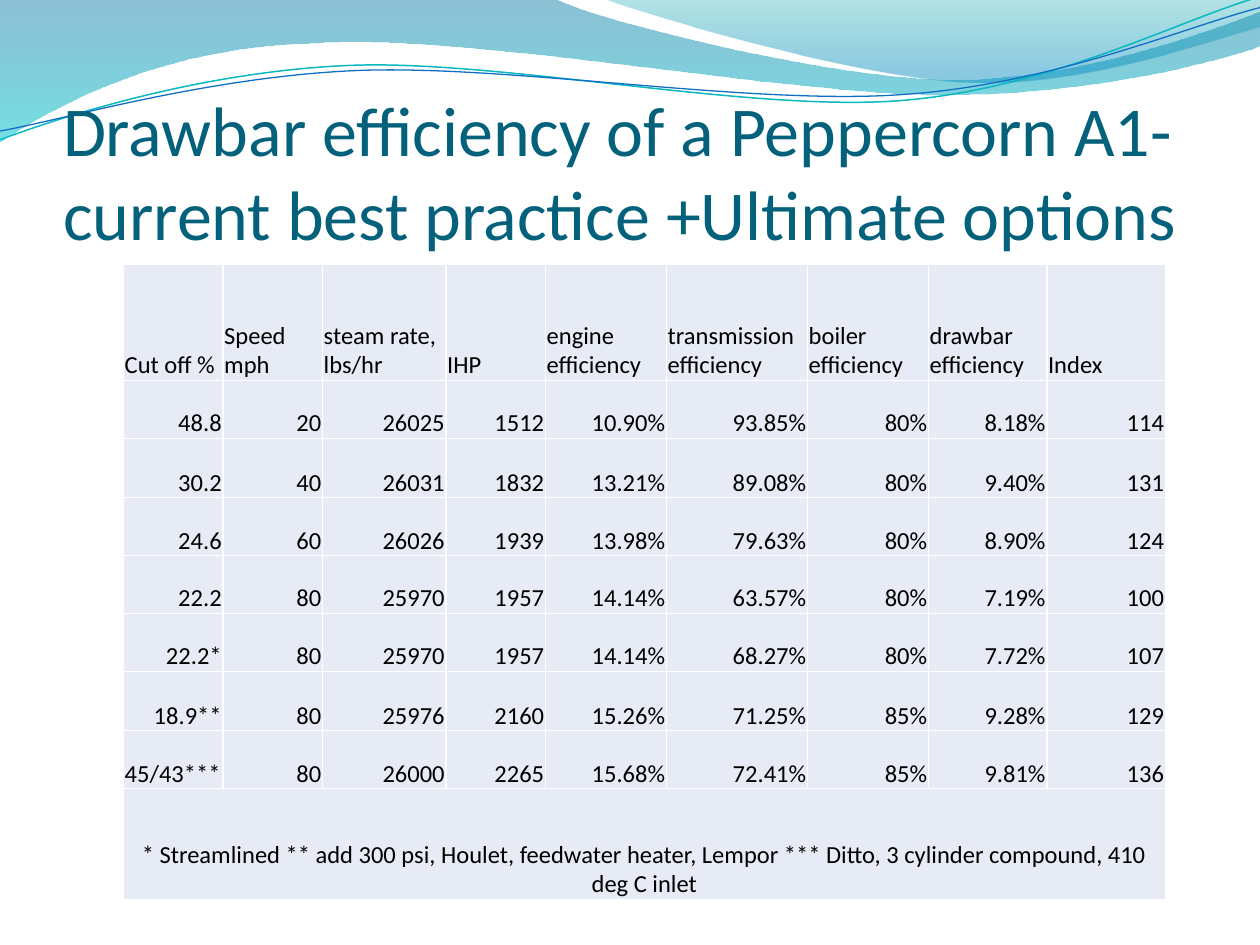
from dataclasses import dataclass
from math import cos, radians, sin

from lxml import etree
from pptx import Presentation
from pptx.dml.color import RGBColor
from pptx.enum.text import MSO_ANCHOR, MSO_AUTO_SIZE, PP_ALIGN
from pptx.oxml.ns import qn
from pptx.util import Inches, Pt

LEFT, CENTER, RIGHT = PP_ALIGN.LEFT, PP_ALIGN.CENTER, PP_ALIGN.RIGHT
BOTTOM = MSO_ANCHOR.BOTTOM
NO_AUTOFIT = MSO_AUTO_SIZE.NONE

FONT = "Calibri"
BLACK = RGBColor(0x00, 0x00, 0x00)
WHITE = RGBColor(0xFF, 0xFF, 0xFF)
TITLE_TEAL = RGBColor(0x04, 0x61, 0x7B)
CELL_BLUE = RGBColor(0xE7, 0xEB, 0xF5)
DEEP_BLUE = RGBColor(0x00, 0x74, 0xA1)
AQUA = RGBColor(0x00, 0xC6, 0xCF)
SEA_GREEN = RGBColor(0x00, 0xA1, 0xA9)
SKY_BLUE = RGBColor(0x00, 0x8B, 0xBF)
LINE_TEAL = RGBColor(0x0A, 0xB8, 0xBF)
LINE_BLUE = RGBColor(0x0F, 0x6F, 0xC6)

DOWNWARD = 270
LINE_TILT = -2.7


@dataclass
class Stop:
    position: float
    color: RGBColor
    opacity: int


@dataclass
class Wave:
    """Steps hold two numbers for a straight line and six for a Bezier curve."""
    box: tuple[float, float, float, float]
    start: tuple[float, float]
    steps: list[tuple[float, ...]]
    stops: tuple[Stop, ...] = ()
    line_color: RGBColor | None = None
    line_width: float = 0
    tilt: float = 0


BANDS = [
    Wave((-0.01, -0.01, 10.02, 1.14), (0, 0), [
        (4.4, -0.01),
        (4.76, 0.17, 6.64, 0.63, 7.58, 0.63),
        (8.53, 0.63, 9.58, 0.26, 10, 0.09),
        (10.01, 0.36),
        (9.83, 0.44, 8.7, 0.76, 7.46, 0.75),
        (6.22, 0.75, 3.82, 0.28, 2.57, 0.34),
        (1.29, 0.36, 0.46, 0.83, -0.01, 1.13),
        (0, 0),
    ], stops=(Stop(0, DEEP_BLUE, 45), Stop(1, AQUA, 55))),
    Wave((4.79, -0.01, 5.21, 0.7), (4.79, -0.01), [
        (5.09, 0.11, 6.82, 0.62, 7.69, 0.65),
        (8.56, 0.69, 9.61, 0.32, 10, 0.21),
        (10, 0),
        (4.79, -0.01),
    ], stops=(Stop(0, SEA_GREEN, 30), Stop(0.8, SKY_BLUE, 45))),
]
LINES = [
    Wave((-0.02, 0.22, 10.02, 0.71), (0, 1.11), [
        (0.48, 0.93, 1.58, 0.57, 2.77, 0.52),
        (3.95, 0.47, 5.93, 0.89, 7.13, 0.8),
        (8.33, 0.71, 9.38, 0.15, 9.98, -0.02),
    ], line_color=LINE_TEAL, line_width=0.85, tilt=LINE_TILT),
    Wave((-0.02, 0.3, 10.03, 0.58), (0, 1.04), [
        (0.47, 0.96, 1.64, 0.61, 2.83, 0.56),
        (4.03, 0.51, 5.97, 0.84, 7.17, 0.75),
        (8.36, 0.67, 9.41, 0.21, 10, 0.06),
    ], line_color=LINE_BLUE, line_width=0.75, tilt=LINE_TILT),
]

TITLE = "Drawbar efficiency of a Peppercorn A1- current best practice +Ultimate options"
HEADERS = ["Cut off %", "Speed mph", "steam rate, lbs/hr", "IHP", "engine efficiency",
           "transmission efficiency", "boiler efficiency", "drawbar efficiency", "Index"]
RUNS = [
    ["48.8", "20", "26025", "1512", "10.90%", "93.85%", "80%", "8.18%", "114"],
    ["30.2", "40", "26031", "1832", "13.21%", "89.08%", "80%", "9.40%", "131"],
    ["24.6", "60", "26026", "1939", "13.98%", "79.63%", "80%", "8.90%", "124"],
    ["22.2", "80", "25970", "1957", "14.14%", "63.57%", "80%", "7.19%", "100"],
    ["22.2*", "80", "25970", "1957", "14.14%", "68.27%", "80%", "7.72%", "107"],
    ["18.9**", "80", "25976", "2160", "15.26%", "71.25%", "85%", "9.28%", "129"],
    ["45/43***", "80", "26000", "2265", "15.68%", "72.41%", "85%", "9.81%", "136"],
]
FOOTNOTE = ("* Streamlined ** add 300 psi, Houlet, feedwater heater, Lempor "
            "*** Ditto, 3 cylinder compound, 410 deg C inlet")
COLUMN_WIDTHS = [0.79, 0.79, 0.98, 0.79, 0.96, 1.12, 0.96, 0.94, 0.94]
ROW_HEIGHTS = [0.92, 0.46, 0.47, 0.46, 0.46, 0.46, 0.47, 0.46, 0.88]


def apply(target, values: dict) -> None:
    for name, value in values.items():
        setattr(target, name, value)


def to_local(wave: Wave, x: float, y: float) -> tuple[int, int]:
    """Turn a slide position into one inside the wave's box before its tilt."""
    left, top, width, height = wave.box
    across, down = x - left - width / 2, y - top - height / 2
    angle = radians(-wave.tilt)
    return (Inches(across * cos(angle) - down * sin(angle) + width / 2),
            Inches(across * sin(angle) + down * cos(angle) + height / 2))


def draw_curves(shape, wave: Wave) -> None:
    """Replace the straight outline by the wave's lines and Bezier curves."""
    outline = next(shape._element.iter(qn("a:path")))
    for child in list(outline):
        outline.remove(child)
    outline.set("w", str(shape.width))
    outline.set("h", str(shape.height))
    for step in [wave.start, *wave.steps]:
        if step is wave.start:
            tag = "a:moveTo"
        else:
            tag = "a:lnTo" if len(step) == 2 else "a:cubicBezTo"
        segment = etree.SubElement(outline, qn(tag))
        for x, y in zip(step[::2], step[1::2]):
            across, down = to_local(wave, x, y)
            etree.SubElement(segment, qn("a:pt"), x=str(across), y=str(down))
    if wave.stops:
        etree.SubElement(outline, qn("a:close"))


def draw_wave(slide, wave: Wave):
    builder = slide.shapes.build_freeform(*map(Inches, wave.start))
    builder.add_line_segments([tuple(map(Inches, step[-2:])) for step in wave.steps], close=False)
    shape = builder.convert_to_shape()
    shape.shadow.inherit = False
    left, top, width, height = map(Inches, wave.box)
    apply(shape, {"left": left, "top": top, "width": width, "height": height,
                  "rotation": wave.tilt})
    draw_curves(shape, wave)
    if not wave.stops:
        shape.fill.background()
        shape.line.color.rgb = wave.line_color
        shape.line.width = Pt(wave.line_width)
        return shape
    shape.line.fill.background()
    shape.fill.gradient()
    shape.fill.gradient_angle = DOWNWARD
    for gradient_stop, stop in zip(shape.fill.gradient_stops, wave.stops):
        gradient_stop.position = stop.position
        gradient_stop.color.rgb = stop.color
    for color, stop in zip(shape._element.spPr.iter(qn("a:srgbClr")), wave.stops):
        etree.SubElement(color, qn("a:alpha"), val=str(stop.opacity * 1000))
    return shape


def write(frame, text: str, size: float, color: RGBColor, alignment) -> None:
    paragraph = frame.paragraphs[0]
    paragraph.alignment = alignment
    span = paragraph.add_run()
    span.text = text
    apply(span.font, {"name": FONT, "size": Pt(size)})
    span.font.color.rgb = color


def add_borders(cell) -> None:
    properties = cell._tc.get_or_add_tcPr()
    for position, side in enumerate(("lnL", "lnR", "lnT", "lnB")):
        border = etree.Element(qn(f"a:{side}"), w=str(Pt(1)))
        fill = etree.SubElement(border, qn("a:solidFill"))
        etree.SubElement(fill, qn("a:srgbClr"), val=str(WHITE))
        properties.insert(position, border)


def fill_cell(cell, text: str, alignment) -> None:
    apply(cell, {"vertical_anchor": BOTTOM, "margin_left": Inches(0.01),
                 "margin_right": Inches(0.01), "margin_top": Inches(0.01), "margin_bottom": 0})
    cell.fill.solid()
    cell.fill.fore_color.rgb = CELL_BLUE
    add_borders(cell)
    if text:
        write(cell.text_frame, text, 14, BLACK, alignment)


def add_efficiency_table(slide) -> None:
    rows = [HEADERS, *RUNS, [FOOTNOTE] + [""] * (len(HEADERS) - 1)]
    table = slide.shapes.add_table(
        len(rows), len(HEADERS), Inches(0.98), Inches(2.1),
        Inches(sum(COLUMN_WIDTHS)), Inches(sum(ROW_HEIGHTS))).table
    apply(table, {"first_row": False, "horz_banding": False})
    for column, width in zip(table.columns, COLUMN_WIDTHS):
        column.width = Inches(width)
    for row, height in zip(table.rows, ROW_HEIGHTS):
        row.height = Inches(height)
    last = len(rows) - 1
    table.cell(last, 0).merge(table.cell(last, len(HEADERS) - 1))
    for row_index, texts in enumerate(rows):
        for column_index, text in enumerate(texts):
            left_aligned = row_index == 0 or text == "45/43***"
            alignment = CENTER if row_index == last else LEFT if left_aligned else RIGHT
            fill_cell(table.cell(row_index, column_index), text, alignment)


def place_title(slide) -> None:
    title = slide.shapes.title
    apply(title, {"left": Inches(0.5), "top": Inches(0.77),
                  "width": Inches(9), "height": Inches(1.25)})
    apply(title.text_frame, {"margin_left": 0, "margin_right": 0, "margin_top": Inches(0.05),
                             "margin_bottom": 0, "vertical_anchor": BOTTOM,
                             "word_wrap": True, "auto_size": NO_AUTOFIT})
    write(title.text_frame, TITLE, 40, TITLE_TEAL, LEFT)
    slide.shapes._spTree.append(title._element)  # in front of the waves


def main() -> None:
    deck = Presentation()
    apply(deck, {"slide_width": Inches(10), "slide_height": Inches(7.5)})
    slide = deck.slides.add_slide(deck.slide_layouts.get_by_name("Title Only"))
    for band in BANDS:
        draw_wave(slide, band)
    slide.shapes.add_group_shape([draw_wave(slide, line) for line in LINES])
    place_title(slide)
    add_efficiency_table(slide)
    deck.save("out.pptx")


if __name__ == "__main__":
    main()
